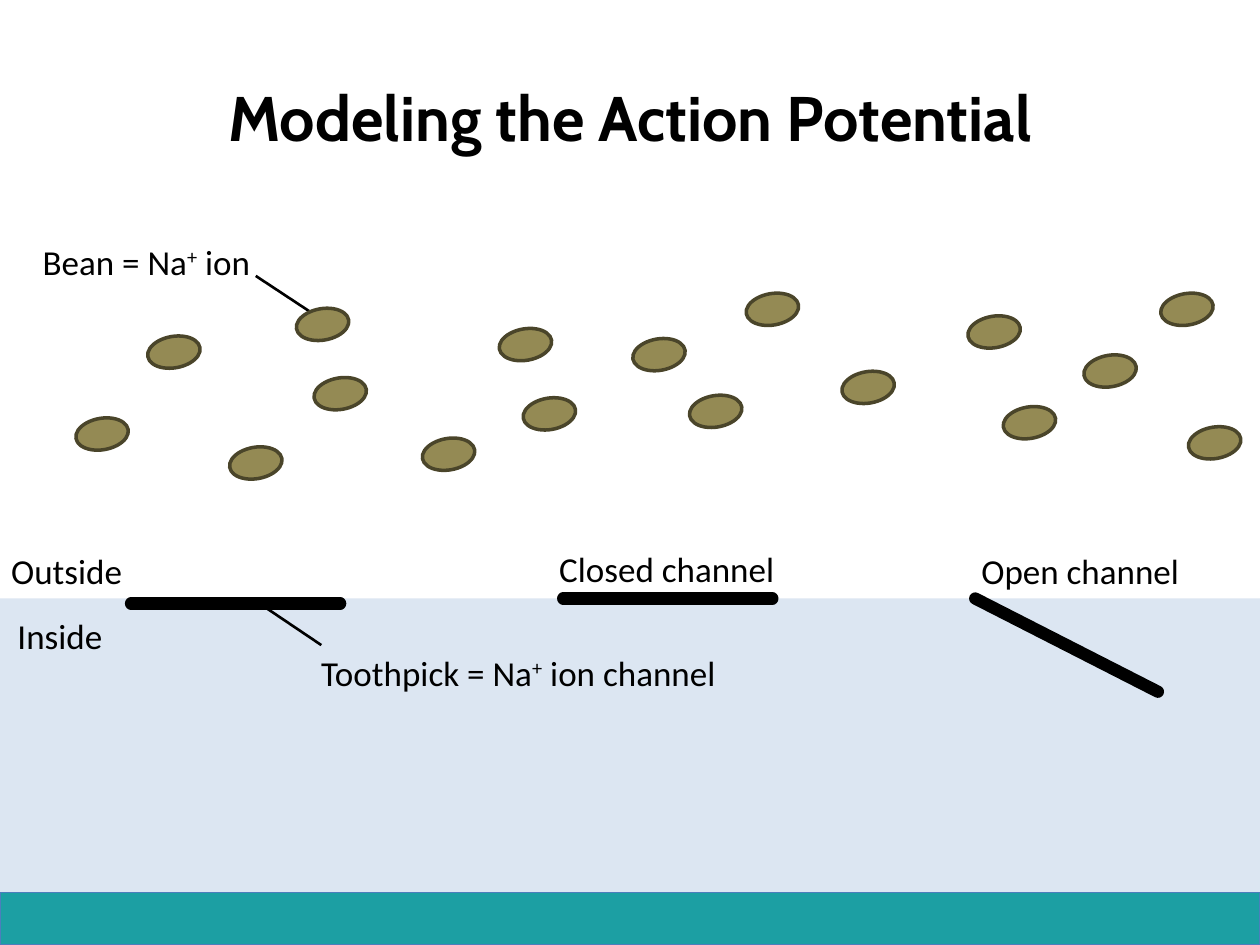
"""Build a slide that models the action potential with beans and toothpicks."""
from lxml import etree
from pptx import Presentation, util as u
from pptx.dml.color import RGBColor
from pptx.enum import shapes, text
from pptx.oxml import ns

COLORS = {"ink": "000000", "teal": "1C9FA3", "teal_edge": "4B7EBC",
          "cell": "DCE6F2", "bean": "948A54", "bean_edge": "4A452A"}


def add_filled(kind, box, fill, edge=None, width=0):
    part = slide.shapes.add_shape(kind, *map(u.Inches, box))
    part.fill.solid()
    part.fill.fore_color.rgb = RGBColor.from_string(COLORS[fill])
    if edge:
        part.line.color.rgb = RGBColor.from_string(COLORS[edge])
        part.line.width = u.Pt(width)
    else:
        part.line.fill.background()
    return part


def add_run(paragraph, words, style):
    run = paragraph.add_run()
    run.text = words
    run.font.color.rgb = RGBColor.from_string(COLORS["ink"])
    for name, value in style.items():
        setattr(run.font, name, value)
    return run


deck = Presentation()
deck.slide_width, deck.slide_height = u.Inches(10), u.Inches(7.5)
slide = deck.slides.add_slide(deck.slide_layouts[5])

title = slide.shapes.title
title_box = {"left": 0.5, "top": 0.3, "width": 9, "height": 1.25}
for side, length in title_box.items():
    setattr(title, side, u.Inches(length))
title.text_frame.vertical_anchor = text.MSO_ANCHOR.MIDDLE
heading = title.text_frame.paragraphs[0]
heading.alignment = text.PP_ALIGN.CENTER
add_run(heading, "Modeling the Action Potential",
        {"name": "Cabin", "size": u.Pt(36), "bold": True})

RECTANGLE = shapes.MSO_SHAPE.RECTANGLE
add_filled(RECTANGLE, (0, 7.08, 10, 0.42), "teal", "teal_edge", 0.75)
inside = add_filled(RECTANGLE, (0, 4.75, 10, 2.33), "cell")
inside.shadow.inherit = False

toothpicks = [(1.04, 4.79, 2.7, 4.79), (4.47, 4.75, 6.13, 4.75), (7.74, 4.75, 9.19, 5.49)]
pointers = [(2.47, 2.48, 2.03, 2.19), (2.55, 5.12, 2.12, 4.83)]
for ends, width, cap in ([(ends, 7, "rnd") for ends in toothpicks]
                         + [(ends, 1.5, "flat") for ends in pointers]):
    stroke = slide.shapes.add_connector(shapes.MSO_CONNECTOR.STRAIGHT, *map(u.Inches, ends))
    stroke.line.color.rgb = RGBColor.from_string(COLORS["ink"])
    stroke.line.width = u.Pt(width)
    properties = stroke._element.spPr
    properties.find(ns.qn("a:ln")).set("cap", cap)
    etree.SubElement(properties, ns.qn("a:effectLst"))

beans = [(1.17, 2.67), (2.35, 2.45), (2.49, 3), (3.96, 2.61), (4.15, 3.16), (5.02, 2.69),
         (5.47, 3.14), (5.92, 2.33), (6.68, 2.95), (7.68, 2.51), (7.96, 3.23), (0.6, 3.32),
         (1.82, 3.55), (3.35, 3.48), (9.21, 2.33), (9.43, 3.39), (8.6, 2.82)]
for left, top in beans:
    bean = add_filled(shapes.MSO_SHAPE.OVAL, (left, top, 0.42, 0.25), "bean", "bean_edge", 2)
    bean.rotation = 350.3
    bean.shadow.inherit = False

labels = [(-0.01, 4.31, 1.09, ["Outside"]),
          (0.04, 4.83, 0.88, ["Inside"]),
          (2.45, 5.12, 3.37, ["Toothpick = Na", "+", " ion channel"]),
          (0.24, 1.86, 1.87, ["Bean = Na", "+", " ion"]),
          (7.69, 4.31, 1.79, ["Open channel"]),
          (4.34, 4.3, 1.93, ["Closed channel"])]
for left, top, width, pieces in labels:
    label = slide.shapes.add_textbox(*map(u.Inches, (left, top, width, 0.44))).text_frame
    label.word_wrap = False
    label.auto_size = text.MSO_AUTO_SIZE.SHAPE_TO_FIT_TEXT
    for piece in pieces:
        run = add_run(label.paragraphs[0], piece, {"name": "Calibri", "size": u.Pt(20)})
        if piece == "+":
            run.font._element.set("baseline", "30000")

deck.save("out.pptx")
